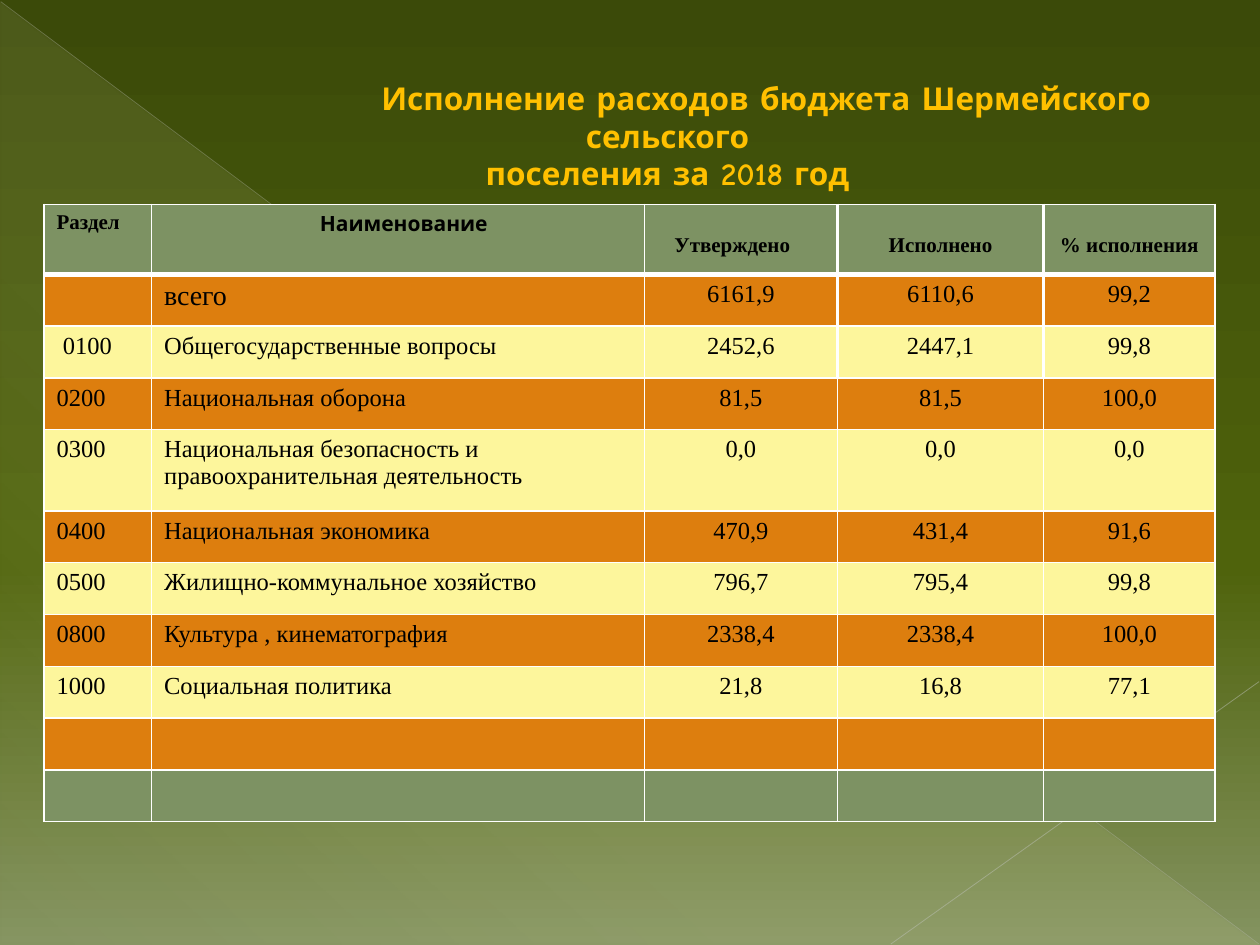
from lxml.etree import SubElement
from pptx import Presentation
from pptx.dml.color import RGBColor
from pptx.enum.shapes import MSO_CONNECTOR, MSO_SHAPE
from pptx.enum.text import MSO_ANCHOR, PP_ALIGN
from pptx.oxml.ns import qn
from pptx.util import Pt

BLACK = RGBColor(0x00, 0x00, 0x00)
WHITE = RGBColor(0xFF, 0xFF, 0xFF)
GOLD = RGBColor(0xFF, 0xC0, 0x00)
SAGE = RGBColor(0x7D, 0x92, 0x63)
ORANGE = RGBColor(0xDD, 0x7E, 0x0E)
YELLOW = RGBColor(0xFD, 0xF6, 0x9C)
CREAM = RGBColor(0xFE, 0xFA, 0xC9)
DARK_GREEN = RGBColor(0x3B, 0x4A, 0x09)
MID_GREEN = RGBColor(0x4F, 0x63, 0x0C)
LIGHT_GREEN = RGBColor(0x84, 0x93, 0x60)
LONG_RAY = RGBColor(0xBA, 0xBD, 0xB3)
SHORT_RAY = RGBColor(0xC1, 0xC4, 0xBC)

SERIF = "Times New Roman"
COLUMNS = [61.4, 281.6, 110.4, 117.8, 98]
HEADERS = ["Раздел", "Наименование", "Утверждено", "Исполнено", "% исполнения"]
EXPENSES = [
    ["", "всего", "6161,9", "6110,6", "99,2"],
    ["0100", "Общегосударственные вопросы", "2452,6", "2447,1", "99,8"],
    ["0200", "Национальная оборона", "81,5", "81,5", "100,0"],
    ["0300", "Национальная безопасность и правоохранительная деятельность",
     "0,0", "0,0", "0,0"],
    ["0400", "Национальная экономика", "470,9", "431,4", "91,6"],
    ["0500", "Жилищно-коммунальное хозяйство", "796,7", "795,4", "99,8"],
    ["0800", "Культура , кинематография", "2338,4", "2338,4", "100,0"],
    ["1000", "Социальная политика", "21,8", "16,8", "77,1"],
    [""] * 5,
    [""] * 5,
]
ROW_HEIGHT, TALL_ROW, HEADER_HEIGHT = 29.6, 46.4, 40


def add_text(frame, text, font=SERIF, size=14, color=BLACK, bold=False,
             align=PP_ALIGN.LEFT):
    para = frame.paragraphs[0]
    para.alignment = align
    for index, line in enumerate(text.split("\n")):
        if index:
            para.add_line_break()
        span = para.add_run()
        span.text = line
        span.font.name, span.font.size = font, Pt(size)
        span.font.bold, span.font.color.rgb = bold, color
    return para


def set_alpha(color_element, percent):
    SubElement(color_element, qn("a:alpha"), val=str(percent * 1000))


def set_gradient(gradient, stops, angle):
    """Fill a gradFill element from (position, colour, opacity) stops."""
    stop_list = gradient.find(qn("a:gsLst"))
    for stop in list(stop_list):
        stop_list.remove(stop)
    for position, color, opacity in stops:
        stop = SubElement(stop_list, qn("a:gs"), pos=str(position * 1000))
        set_alpha(SubElement(stop, qn("a:srgbClr"), val=str(color)), opacity)
    gradient.find(qn("a:lin")).set("ang", str(angle * 60000))


def add_ray(page, start, end, color, width, opacity):
    ray = page.shapes.add_connector(
        MSO_CONNECTOR.STRAIGHT, *(Pt(value) for value in start + end))
    ray.line.color.rgb, ray.line.width = color, Pt(width)
    properties = ray.element.spPr
    set_alpha(next(properties.iter(qn("a:srgbClr"))), opacity)
    SubElement(properties, qn("a:effectLst"))


def add_backdrop(page, left, top, width, height):
    page.background.fill.gradient()
    set_gradient(next(page.element.iter(qn("a:gradFill"))),
                 [(0, DARK_GREEN, 100), (60, MID_GREEN, 100), (100, LIGHT_GREEN, 100)], 90)
    triangle = page.shapes.add_shape(
        MSO_SHAPE.RIGHT_TRIANGLE, Pt(left), Pt(top), Pt(width), Pt(height))
    triangle.shadow.inherit = False
    triangle.line.fill.background()
    triangle.fill.gradient()
    set_gradient(triangle.element.spPr.find(qn("a:gradFill")),
                 [(0, CREAM, 10), (70, CREAM, 8), (100, CREAM, 1)], 133)
    right, bottom = left + width, top + height
    add_ray(page, (left, top), (right, bottom), LONG_RAY, 0.39, 35)
    add_ray(page, (right, top + 388.5), (right - 210.5, bottom), SHORT_RAY, 0.47, 45)


def add_title(page, left, top, width, height):
    box = page.shapes.add_textbox(Pt(left), Pt(top), Pt(width), Pt(height))
    frame = box.text_frame
    frame.word_wrap = True
    frame.vertical_anchor = MSO_ANCHOR.MIDDLE
    para = add_text(
        frame, "Исполнение расходов бюджета Шермейского сельского\nпоселения за 2018 год",
        font="Comic Neue", size=18, color=GOLD, bold=True, align=PP_ALIGN.CENTER)
    indents = para._p.get_or_add_pPr()
    indents.set("marL", str(Pt(38)))
    indents.set("indent", str(Pt(113)))


def set_borders(cell, **widths):
    properties = cell._tc.get_or_add_tcPr()
    for index, side in enumerate("LRTB"):
        border = SubElement(properties, qn("a:ln" + side), w=str(Pt(widths.get(side, 1))))
        SubElement(SubElement(border, qn("a:solidFill")), qn("a:srgbClr"), val=str(WHITE))
        properties.insert(index, border)


def row_color(row, last_row):
    if row in (0, last_row):
        return SAGE
    return ORANGE if row % 2 else YELLOW


def fill_header(cell, column):
    add_text(cell.text_frame, HEADERS[column], font="Quicksand" if column == 1 else SERIF,
             size=12, bold=True, align=PP_ALIGN.CENTER if column else PP_ALIGN.LEFT)
    if column == 1:
        cell.margin_left = Pt(14)
    if column == 2:
        cell.margin_right = Pt(17)
    if column > 1:
        cell.margin_top = Pt(17)


def add_expense_table(page, left, top, width, height):
    rows = [HEADERS] + EXPENSES
    table = page.shapes.add_table(len(rows), len(COLUMNS), Pt(left), Pt(top),
                                  Pt(width), Pt(height)).table
    table.horz_banding = False
    for column, column_width in zip(table.columns, COLUMNS):
        column.width = Pt(column_width)
    for row, values in enumerate(rows):
        tall = values[0] == "0300"
        table.rows[row].height = Pt(
            HEADER_HEIGHT if row == 0 else TALL_ROW if tall else ROW_HEIGHT)
        for column, value in enumerate(values):
            cell = table.cell(row, column)
            cell.fill.solid()
            cell.fill.fore_color.rgb = row_color(row, len(rows) - 1)
            set_borders(cell,
                        L=1.5 if row < 3 and column > 2 else 1,
                        R=1.5 if row < 3 and column in (2, 3) else 1,
                        T=3 if row == 1 else 1,
                        B=3 if row == 0 else 1)
            if row == 0:
                fill_header(cell, column)
            elif value:
                add_text(cell.text_frame, value, size=16 if value == "всего" else 14,
                         align=PP_ALIGN.CENTER if column > 1 else PP_ALIGN.LEFT)
            if value == "0100":
                cell.margin_left = Pt(10.7)


def main():
    deck = Presentation()
    deck.slide_width, deck.slide_height = Pt(720), Pt(540)
    page = deck.slides.add_slide(deck.slide_layouts[6])
    add_backdrop(page, 0.5, 1, 719, 538.5)
    add_title(page, 25.2, 66.5, 674.6, 22)
    add_expense_table(page, 25.2, 116.8, sum(COLUMNS), 352.8)
    deck.save("out.pptx")


if __name__ == "__main__":
    main()
